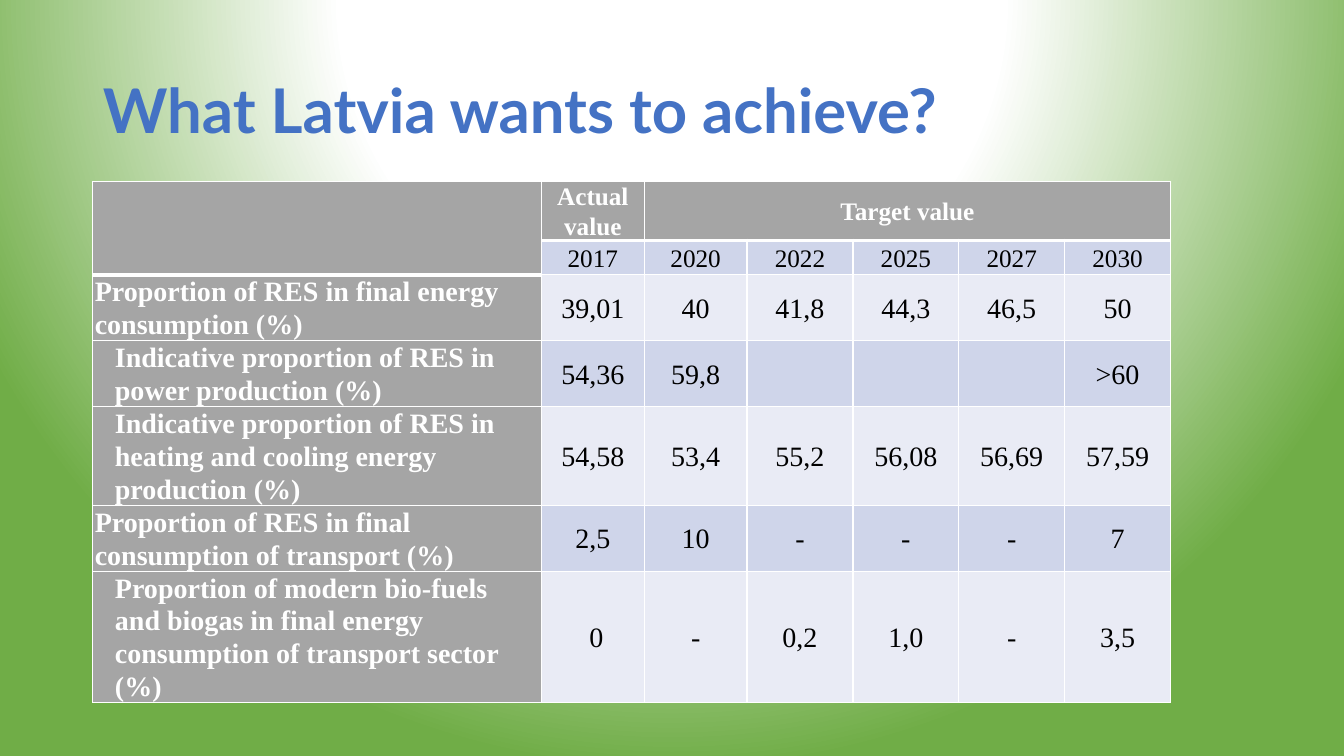
from pptx import Presentation
from pptx.dml.color import RGBColor
from pptx.enum.text import MSO_ANCHOR as Anchor, PP_ALIGN as Align
from pptx.oxml import parse_xml
from pptx.oxml.ns import nsdecls
from pptx.util import Inches, Pt

TITLE = "What Latvia wants to achieve?"
HEADINGS = ["", "Actual value", "Target value", "", "", "", ""]
YEARS = ["", "2017", "2020", "2022", "2025", "2027", "2030"]
INDICATORS = [
    (0, "Proportion of RES in final energy consumption (%)",
     ["39,01", "40", "41,8", "44,3", "46,5", "50"]),
    (1, "Indicative proportion of RES in power production (%)",
     ["54,36", "59,8", "", "", "", ">60"]),
    (1, "Indicative proportion of RES in heating and cooling energy production (%)",
     ["54,58", "53,4", "55,2", "56,08", "56,69", "57,59"]),
    (0, "Proportion of RES in final consumption of transport (%)",
     ["2,5", "10", "-", "-", "-", "7"]),
    (1, "Proportion of modern bio-fuels and biogas in final energy consumption of transport sector (%)",
     [" 0", "-", "0,2", "1,0", "-", "3,5"]),
]
COLUMNS = [4.45] + [1.02] * 2 + [1.05] * 4
TEXT_LINE = 0.32
ROWS = [0.58, 0.34] + [TEXT_LINE * lines for lines in (2, 2, 3, 2, 4)]
LEFT, TABLE_TOP = 0.92, 1.8
WHITE, BLACK, BLUE, GREEN, GREY = "FFFFFF", "000000", "4472C4", "70AD47", "A5A5A5"
BANDS = ["E9EBF5", "CFD5EA"]


def style(paragraph, face, size, colour, bold, spacing, align):
    paragraph.alignment = align
    paragraph.line_spacing = spacing
    font = paragraph.font
    font.name, font.size, font.bold = face, Pt(size), bold
    font.color.rgb = RGBColor.from_string(colour)


def paint_background(slide):
    slide.background.fill.solid()
    properties = slide.element.xpath(".//p:bgPr")[0]
    stops = "".join(
        f'<a:gs pos="{share * 1000}"><a:srgbClr val="{colour}"/></a:gs>'
        for share, colour in [(0, WHITE), (43, WHITE), (100, GREEN)])
    properties.replace(properties[0], parse_xml(
        f'<a:gradFill {nsdecls("a")} rotWithShape="1"><a:gsLst>{stops}</a:gsLst>'
        '<a:path path="circle"><a:fillToRect l="50000" t="-80000" r="50000" b="180000"/>'
        '</a:path></a:gradFill>'))


def closes_header(row, column):
    return row == 0 or (row, column) == (1, 0)


def border(cell, row, column):
    heavy = {"T": row > 0 and closes_header(row - 1, column),
             "B": closes_header(row, column)}
    for side in "LRTB":
        width = Pt(3 if heavy.get(side) else 1)
        cell._tc.get_or_add_tcPr().append(parse_xml(
            f'<a:ln{side} {nsdecls("a")} w="{width}"><a:solidFill>'
            f'<a:srgbClr val="{WHITE}"/></a:solidFill></a:ln{side}>'))


def fill_cell(cell, row, column, text, level):
    header = row == 0 or column == 0
    border(cell, row, column)
    cell.fill.solid()
    cell.fill.fore_color.rgb = RGBColor.from_string(GREY if header else BANDS[row % 2])
    cell.vertical_anchor = Anchor.MIDDLE
    cell.margin_left = cell.margin_right = Inches(0.02)
    cell.margin_top = cell.margin_bottom = 0
    cell.text = text
    paragraph = cell.text_frame.paragraphs[0]
    style(paragraph, "Times New Roman", 18 if row < 2 else 20, WHITE if header else BLACK,
          header, 1.06, Align.CENTER if column else Align.LEFT)
    if level and column == 0:
        indent = paragraph._p.get_or_add_pPr()
        indent.set("marL", str(Inches(0.2)))
        indent.set("indent", "0")


def add_targets(slide):
    lines = [(0, HEADINGS), (0, YEARS)]
    lines += [(level, [label] + values) for level, label, values in INDICATORS]
    targets = slide.shapes.add_table(
        len(ROWS), len(COLUMNS), Inches(LEFT), Inches(TABLE_TOP),
        Inches(sum(COLUMNS)), Inches(sum(ROWS))).table
    for column, width in zip(targets.columns, COLUMNS):
        column.width = Inches(width)
    for row, height in zip(targets.rows, ROWS):
        row.height = Inches(height)
    for row, (level, texts) in enumerate(lines):
        for column, text in enumerate(texts):
            fill_cell(targets.cell(row, column), row, column, text, level)
    targets.cell(0, 0).merge(targets.cell(1, 0))
    targets.cell(0, 2).merge(targets.cell(0, len(COLUMNS) - 1))


def main():
    deck = Presentation()
    deck.slide_width, deck.slide_height = Inches(13.33), Inches(7.5)
    slide = deck.slides.add_slide(deck.slide_layouts[5])
    paint_background(slide)
    title = slide.shapes.title
    title.left, title.top = Inches(LEFT), Inches(0.4)
    title.width, title.height = Inches(11.5), Inches(1.45)
    title.text_frame.text = TITLE
    title.text_frame.vertical_anchor = Anchor.MIDDLE
    style(title.text_frame.paragraphs[0], "Lato", 44, BLUE, True, 0.9, Align.LEFT)
    add_targets(slide)
    deck.save("out.pptx")


if __name__ == "__main__":
    main()
